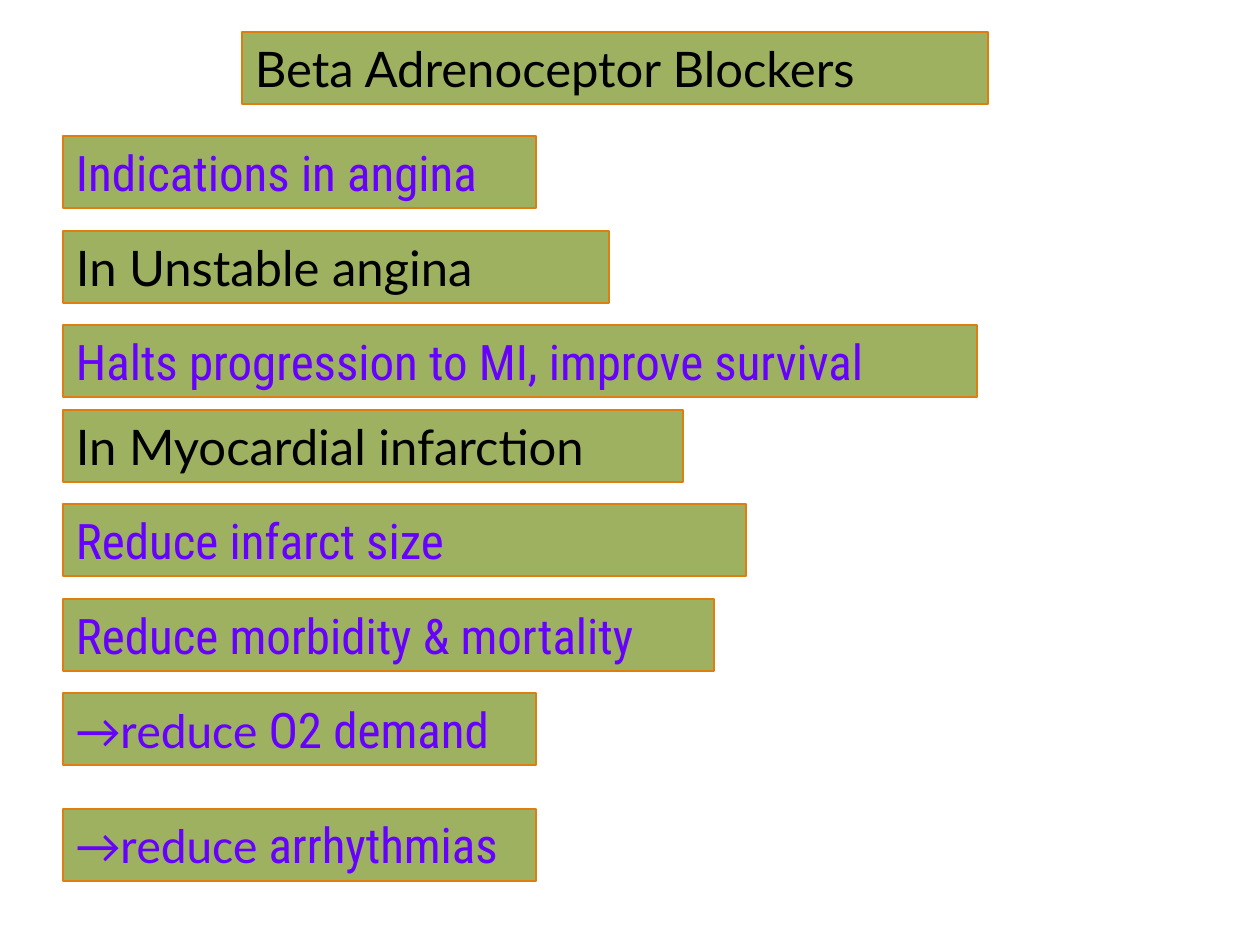
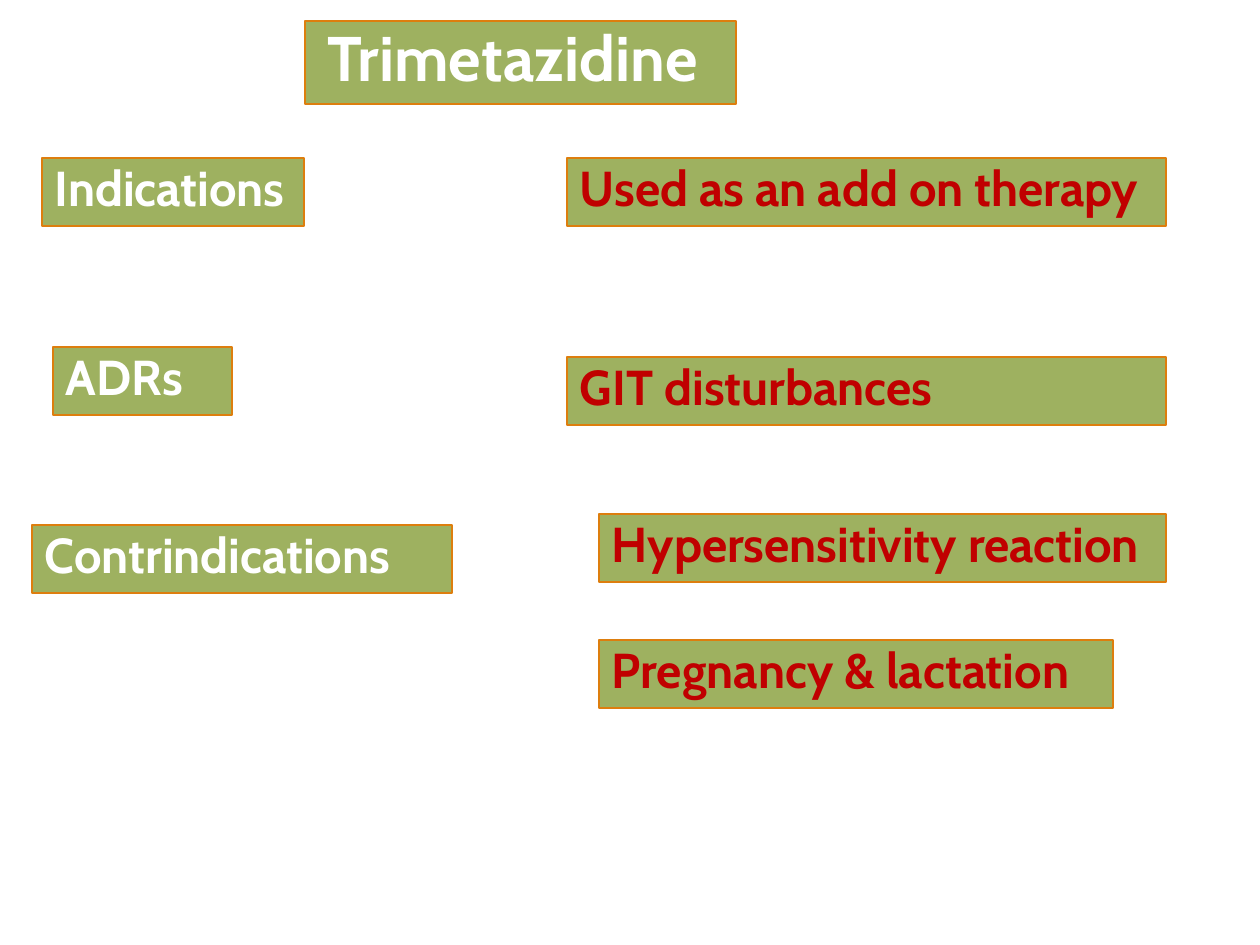
"""Build two slides on antianginal drugs from labelled green boxes."""
from pptx import Presentation
from pptx.dml.color import RGBColor
from pptx.enum.shapes import MSO_SHAPE as SHAPE
from pptx.enum.text import MSO_ANCHOR as ANCHOR, MSO_AUTO_SIZE as AUTO, PP_ALIGN as ALIGN
from pptx.util import Emu, Pt

SCALE = 914400 / 126
BOX_FILL, BOX_LINE = "9EB160", "DD7E0E"
INSET_X, INSET_Y = 13, 6
TITLE_ONLY = 5

STYLES = {
    "heading": dict(font="Lato", color="000000"),
    "point": dict(font="Roboto Condensed", color="6600FF"),
    "effect": dict(font="Calibri", color="6600FF"),
    "drug": dict(font="Cabin", color="FFFFFF", size=36, bold=True),
    "topic": dict(font="Cabin", color="FFFFFF", bold=True),
    "detail": dict(font="Cabin", color="C00000", bold=True),
}

BETA_BLOCKERS = dict(
    height=72, spacing=1.0,
    title=(242, 32, 746, 72, 13, [("Beta Adrenoceptor Blockers", "heading")]),
    boxes=[
        (63, 136, 473, [("Indications in angina", "point")]),
        (63, 231, 546, [("In Unstable angina", "heading")]),
        (63, 325, 914, [("Halts progression to MI, improve survival", "point")]),
        (63, 410, 620, [("In Myocardial infarction", "heading")]),
        (63, 504, 683, [("Reduce infarct size", "point")]),
        (63, 599, 651, [("Reduce morbidity & mortality", "point")]),
        (63, 693, 473, [("→reduce ", "effect"), ("O2 demand", "point")]),
        (63, 809, 473, [("→reduce ", "effect"), ("arrhythmias", "point")]),
    ])

TRIMETAZIDINE = dict(
    height=68, spacing=0.9,
    title=(305, 21, 431, 83, 23, [("Trimetazidine", "drug")]),
    boxes=[
        (42, 158, 262, [("Indications", "topic")]),
        (567, 158, 599, [("Used as an add on therapy", "detail")]),
        (53, 347, 179, [("ADRs", "topic")]),
        (567, 357, 599, [("GIT disturbances", "detail")]),
        (32, 525, 420, [("Contrindications", "topic")]),
        (599, 514, 567, [("Hypersensitivity reaction", "detail")]),
        (599, 640, 514, [("Pregnancy & lactation", "detail")]),
    ])


def px(n):
    return Emu(round(n * SCALE))


def rgb(color):
    return RGBColor.from_string(color)


def add_run(p, text, font, color, size=28, bold=False):
    r = p.add_run()
    r.text = text
    r.font.name, r.font.size, r.font.bold = font, Pt(size), bold
    r.font.color.rgb = rgb(color)


def format_box(sp, runs, spacing, indent=INSET_X):
    sp.shadow.inherit = False
    sp.fill.solid()
    sp.fill.fore_color.rgb = rgb(BOX_FILL)
    sp.line.color.rgb = rgb(BOX_LINE)
    sp.line.width = Pt(0.75)
    tf = sp.text_frame
    tf.word_wrap = True
    tf.auto_size = AUTO.NONE
    tf.vertical_anchor = ANCHOR.TOP
    tf.margin_left, tf.margin_right = px(indent), px(INSET_X)
    tf.margin_top = tf.margin_bottom = px(INSET_Y)
    p = tf.paragraphs[0]
    p.alignment = ALIGN.LEFT
    p.line_spacing = spacing
    for text, style in runs:
        add_run(p, text, **STYLES[style])


def build_slide(prs, height, spacing, title, boxes):
    s = prs.slides.add_slide(prs.slide_layouts[TITLE_ONLY])
    *place, indent, runs = title
    sp = s.shapes.title
    sp.left, sp.top, sp.width, sp.height = map(px, place)
    format_box(sp, runs, spacing, indent)
    for left, top, width, runs in boxes:
        sp = s.shapes.add_shape(SHAPE.RECTANGLE, *map(px, (left, top, width, height)))
        format_box(sp, runs, spacing)


def main():
    prs = Presentation()
    prs.slide_width, prs.slide_height = px(1260), px(945)
    for content in (BETA_BLOCKERS, TRIMETAZIDINE):
        build_slide(prs, **content)
    prs.save("out.pptx")


if __name__ == "__main__":
    main()
